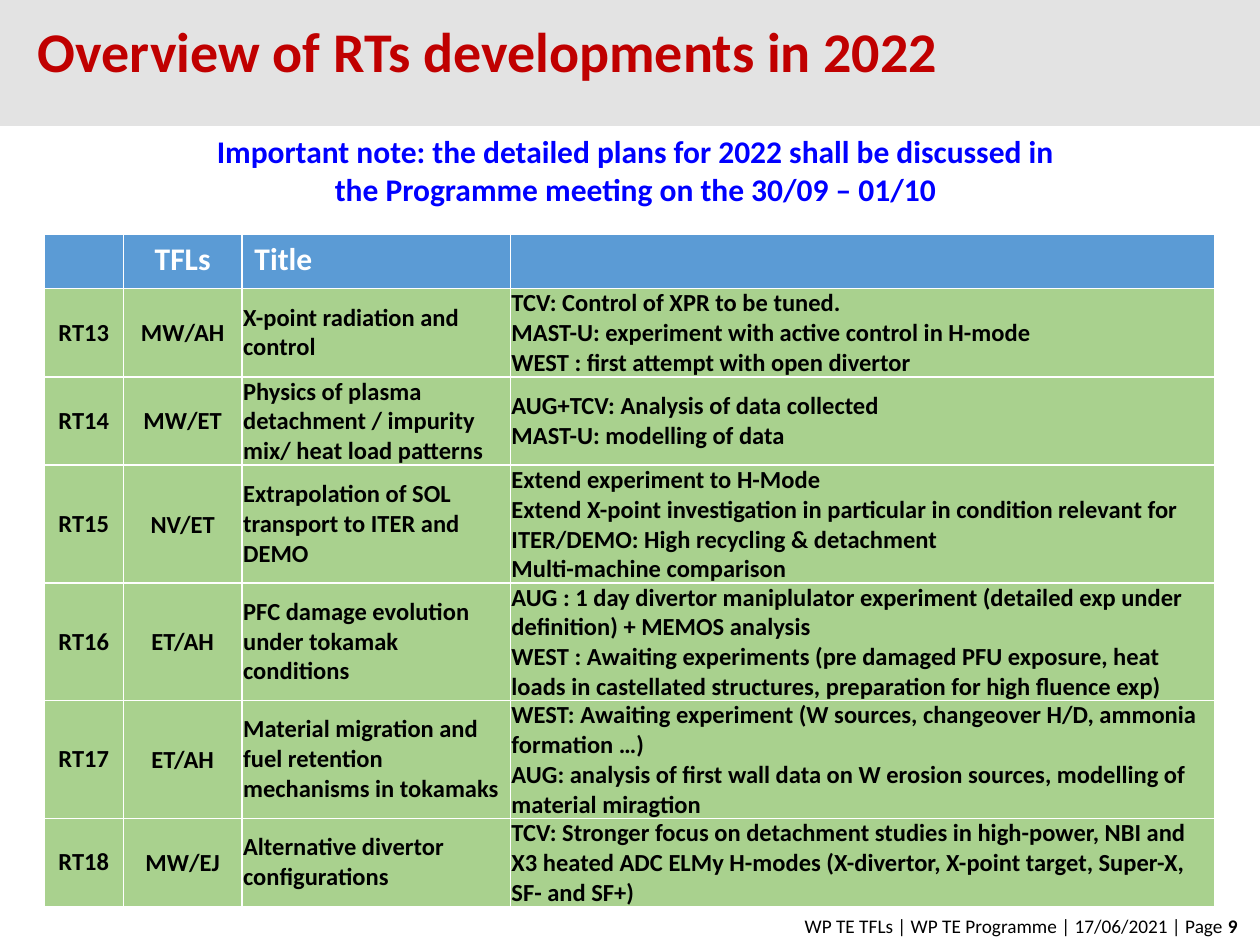
from pptx import Presentation
from pptx.dml.color import RGBColor
from pptx.enum.shapes import MSO_SHAPE as Shape
from pptx.enum.text import MSO_ANCHOR as Anchor, PP_ALIGN as Align
from pptx.util import Inches, Pt

COLORS = {
    "band": "E3E3E3", "title": "C00000", "note": "0000FF",
    "header": "5B9BD5", "row": "A9D18E", "white": "FFFFFF", "black": "000000",
}


def style_text(frame, size, color, bold=True, align=Align.LEFT):
    for paragraph in frame.paragraphs:
        paragraph.alignment = align
        for run in paragraph.runs:
            run.font.name = "Calibri"
            run.font.size = Pt(size)
            run.font.bold = bold
            run.font.color.rgb = RGBColor.from_string(COLORS[color])


def fill_with(item, color):
    item.fill.solid()
    item.fill.fore_color.rgb = RGBColor.from_string(COLORS[color])


prs = Presentation()
prs.slide_width, prs.slide_height = Inches(10), Inches(7.5)
slide = prs.slides.add_slide(prs.slide_layouts[5])

# Title on a grey band
title = slide.shapes.title
title.left, title.top, title.width, title.height = Inches(0.2), 0, Inches(8.55), Inches(1)
title.text_frame.text = "Overview of RTs developments in 2022"
title.text_frame.vertical_anchor = Anchor.MIDDLE
title.text_frame.paragraphs[0].line_spacing = Pt(24)
style_text(title.text_frame, 32, "title")

band = slide.shapes.add_shape(Shape.RECTANGLE, 0, 0, prs.slide_width, Inches(1))
band.shadow.inherit = False
band.line.fill.background()
fill_with(band, "band")
title.element.addprevious(band.element)  # the band lies behind the title

# Note below the band
note = slide.shapes.add_textbox(Inches(1.48), Inches(1), Inches(7.13), Inches(0.71)).text_frame
note.word_wrap = True
note.text = ("Important note: the detailed plans for 2022 shall be discussed in "
             "the Programme meeting on the 30/09 – 01/10")
style_text(note, 18, "note", align=Align.CENTER)

# Table of research topics; each line of a plan is a paragraph
topics = [
    ("", "TFLs", "Title", ""),
    ("RT13", "MW/AH", "X-point radiation and control",
     "TCV: Control of XPR to be tuned.\n"
     "MAST-U: experiment with active control in H-mode\n"
     "WEST : first attempt with open divertor"),
    ("RT14", "MW/ET", "Physics of plasma detachment / impurity mix/ heat load patterns",
     "AUG+TCV: Analysis of data collected\n"
     "MAST-U: modelling of data"),
    ("RT15", "NV/ET", "Extrapolation of SOL transport to ITER and DEMO",
     "Extend experiment to H-Mode\n"
     "Extend X-point investigation in particular in condition relevant for "
     "ITER/DEMO: High recycling & detachment\n"
     "Multi-machine comparison"),
    ("RT16", "ET/AH", "PFC damage evolution under tokamak conditions",
     "AUG : 1 day divertor maniplulator experiment (detailed exp under "
     "definition) + MEMOS analysis\n"
     "WEST : Awaiting experiments (pre damaged PFU exposure, heat loads in "
     "castellated structures, preparation for high fluence exp)"),
    ("RT17", "ET/AH", "Material migration and fuel retention mechanisms in tokamaks",
     "WEST: Awaiting experiment (W sources, changeover H/D, ammonia formation …)\n"
     "AUG: analysis of first wall data on W erosion sources, modelling of "
     "material miragtion"),
    ("RT18", "MW/EJ", "Alternative divertor configurations",
     "TCV: Stronger focus on detachment studies in high-power, NBI and X3 heated "
     "ADC ELMy H-modes (X-divertor, X-point target, Super-X, SF- and SF+)"),
]
column_widths = [0.63, 0.94, 2.13, 5.59]
row_heights = [0.43, 0.7, 0.7, 0.93, 0.93, 0.93, 0.7]

table = slide.shapes.add_table(
    len(topics), len(column_widths), Inches(0.35), Inches(1.86),
    Inches(sum(column_widths)), Inches(sum(row_heights))).table
table.horz_banding = False
for column, width in zip(table.columns, column_widths):
    column.width = Inches(width)

for r, (topic, height) in enumerate(zip(topics, row_heights)):
    table.rows[r].height = Inches(height)
    for c, text in enumerate(topic):
        cell = table.cell(r, c)
        cell.text_frame.text = text
        align = Align.CENTER if c < 2 else Align.LEFT
        if r == 0:
            fill_with(cell, "header")
            style_text(cell.text_frame, 18, "white", align=align)
            continue
        fill_with(cell, "row")
        style_text(cell.text_frame, 14, "black", align=align)
        cell.vertical_anchor = Anchor.MIDDLE
        cell.margin_left = cell.margin_right = Inches(0.1 if c == 0 else 0.01)
        cell.margin_top = Inches(0.01 if c == 1 else 0)
        cell.margin_bottom = 0

# Footer with bold page number
footer = slide.shapes.add_textbox(Inches(0.91), Inches(7.21), Inches(9.01), Inches(0.29)).text_frame
footer.word_wrap = True
footer.text = "WP TE TFLs | WP TE Programme | 17/06/2021 | Page "
page_number = footer.paragraphs[0].add_run()
page_number.text = "9"
style_text(footer, 11, "black", bold=False, align=Align.RIGHT)
page_number.font.bold = True

prs.save("out.pptx")
